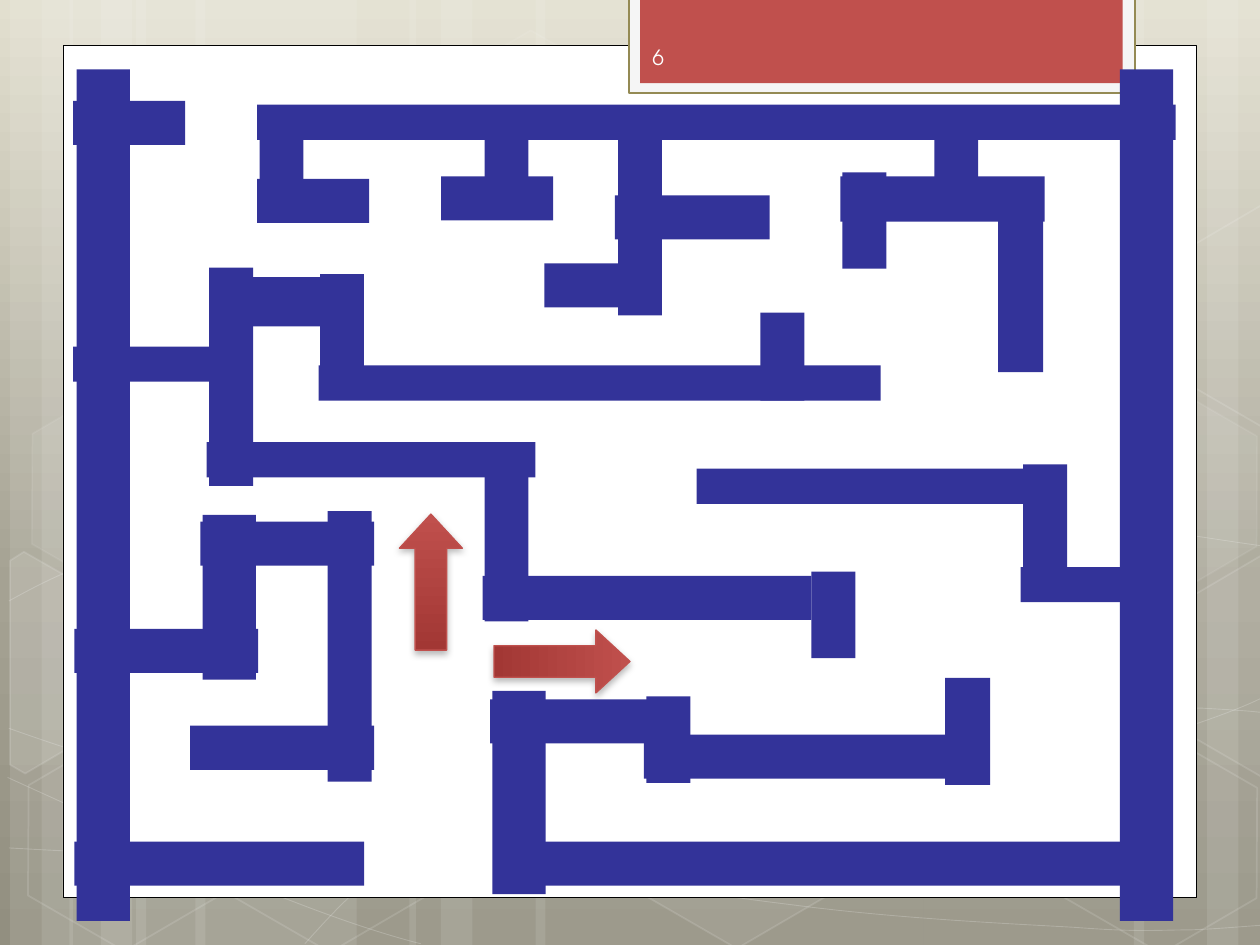
from lxml import etree
from copy import deepcopy
from pptx import Presentation
from pptx.dml.color import RGBColor
from pptx.enum.shapes import MSO_SHAPE
from pptx.enum.text import MSO_ANCHOR
from pptx.oxml.ns import qn
from pptx.util import Inches, Pt

RECTANGLE = MSO_SHAPE.RECTANGLE
HEXAGON = MSO_SHAPE.HEXAGON
UP_ARROW = MSO_SHAPE.UP_ARROW
MIDDLE = MSO_ANCHOR.MIDDLE

COLORS = {
    "white": "FFFFFF", "black": "000000", "wall": "333399", "red": "C0504D",
    "dark_red": "A23734", "tab": "F5F5F5", "tab_line": "948A54", "number": "FEFEFE",
    "sky": "E2DFCF", "middle": "A5A293", "ground": "928F80",
}
BACKGROUND = [(0, "sky"), (0.62, "middle"), (1, "ground")]
ARROW_FILL = [(0, "red"), (1, "dark_red")]

STRIPES = [
    (1.08, 1.75), (0.08, 0.5), (0.33, 0.83), (1.55, 1.75), (0.55, 0.5), (0.8, 0.83),
    (7.33, 1.75), (9.58, 0.5), (9, 0.83), (4.25, 3.08), (3.25, 0.5), (3.5, 0.83),
]
CURVES = [
    [(0.07, 6.73), (0.61, 6.76), (1.15, 6.79), (1.9, 6.78), (2.65, 6.77), (3.58, 6.75),
     (4.58, 6.65), (5.58, 6.55), (7, 6.36), (7.92, 6.17), (8.83, 5.98), (9.77, 5.68),
     (10.07, 5.51)],
    [(0.07, 4.77), (0.36, 4.61), (0.65, 4.46), (1.21, 4.31), (1.78, 4.16), (2.59, 3.94),
     (3.47, 3.87), (4.36, 3.8), (5.44, 3.79), (6.54, 3.87), (7.64, 3.95), (9.47, 4.26),
     (10.07, 4.34)],
    [(0.06, 6.17), (1.27, 6.72), (2.47, 7.27), (3.34, 7.49)],
    [(0.07, 5.78), (0.38, 5.89), (0.7, 6), (1.28, 6.16), (1.86, 6.31), (2.73, 6.56),
     (3.57, 6.73), (4.4, 6.9), (5.45, 7.08), (6.28, 7.18), (7.11, 7.29), (8, 7.33),
     (8.53, 7.36), (9.05, 7.4), (9.19, 7.38), (9.45, 7.38), (9.71, 7.37), (9.89, 7.35),
     (10.07, 7.34)],
    [(2.42, 7.49), (2.6, 7.29), (2.78, 7.09), (3.02, 6.91), (3.26, 6.73), (3.6, 6.53),
     (3.88, 6.39), (4.16, 6.25), (4.33, 6.19), (4.7, 6.09), (5.06, 5.99), (5.73, 5.85),
     (6.08, 5.78), (6.44, 5.71), (6.49, 5.71), (6.8, 5.69), (7.11, 5.66), (7.6, 5.63),
     (7.94, 5.62), (8.29, 5.61), (8.86, 5.62), (8.86, 5.62), (9.08, 5.62), (9.31, 5.62),
     (9.53, 5.62), (9.71, 5.63), (9.88, 5.64), (9.97, 5.65), (10.06, 5.66),
     (10.03, 5.65), (10.06, 5.66)],
]
HEXAGONS = [
    (3.34, 0.36, 4, 8), (4.97, 5.89, 6, 12), (0.11, 5.91, None, 12), (0.14, 3.12, 7, 8),
    (1.74, 5.92, None, 12), (7.53, 4.53, 10, 12), (8.34, 5.93, None, 12), (8.34, 3.14, 7, 8),
]
CUT_HEXAGONS = [
    (10, [(0.08, 4.45), (0.19, 4.38), (0.96, 4.82), (0.95, 5.7), (0.2, 6.14), (0.08, 6.07)]),
    (4, [(9.26, 4.85), (10.01, 4.41), (10.09, 4.46), (10.09, 6.13), (10.02, 6.17), (9.26, 5.73)]),
    (None, [(9.26, 2.07), (10.01, 1.63), (10.1, 1.68), (10.09, 3.35), (10.02, 3.39), (9.26, 2.95)]),
]
PANELS = [
    ((0.5, 0.36, 9, 6.76), {"fill": "white", "line": "black", "width": 0.5}),
    ((4.99, -0.02, 4.02, 0.76), {"fill": "tab", "line": "tab_line", "width": 1.25}),
    ((5.08, -0.02, 3.83, 0.68), {"fill": "red"}),
]
PAGE_NUMBER = "6"
NUMBER_FONT = {"name": "TeX Gyre Adventor", "size": Pt(12)}
ARROWS = [(3.17, 4.08, 0), (4.21, 4.71, 90)]

MAZE_STRETCH = 1.09
HORIZONTAL_WALLS = [
    (0.59, 6.68, 2.3, 0.35), (3.83, 4.57, 2.61, 0.35), (0.59, 4.99, 1.46, 0.35),
    (2.53, 2.9, 4.46, 0.28), (5.53, 3.72, 2.76, 0.28), (2.04, 0.83, 7.29, 0.28),
    (1.59, 4.14, 1.38, 0.35), (1.74, 2.2, 1.12, 0.39), (6.67, 1.4, 1.62, 0.36),
    (0.58, 2.75, 1.38, 0.28), (1.51, 5.76, 1.46, 0.35), (3.89, 5.55, 1.53, 0.35),
    (4.12, 6.68, 5.14, 0.35), (4.32, 2.09, 0.89, 0.35), (1.64, 3.51, 2.61, 0.28),
    (8.1, 4.5, 1.15, 0.28), (5.11, 5.83, 2.61, 0.35), (4.88, 1.55, 1.23, 0.35),
    (3.5, 1.4, 0.89, 0.35), (2.04, 1.42, 0.89, 0.35), (0.58, 0.8, 0.89, 0.35),
]
VERTICAL_WALLS = [
    (6.3, 4.69, 0.63, 0.38), (7.29, 5.61, 0.78, 0.39), (6.51, 1.56, 0.7, 0.38),
    (6, 3.7, 6.2, 0.46), (2.27, 2.47, 0.89, 0.38), (1.04, 2.8, 1.59, 0.38),
    (-2.28, 3.7, 6.2, 0.46), (3.44, 4.11, 1.16, 0.38), (1.79, 4.94, 1.97, 0.38),
    (1.22, 4.51, 1.2, 0.46), (1.92, 1.07, 0.63, 0.38), (3.38, 6.06, 1.48, 0.46),
    (7.29, 1.06, 0.6, 0.38), (7.46, 2.06, 1.28, 0.39), (4.99, 5.68, 0.63, 0.38),
    (7.84, 3.99, 0.91, 0.38), (5.89, 2.64, 0.64, 0.38), (4.37, 1.54, 1.42, 0.38),
    (3.72, 1.2, 0.6, 0.38),
]


def rgb(name):
    return RGBColor.from_string(COLORS[name])


def paint_gradient(fill, element, stops):
    fill.gradient()
    fill.gradient_angle = 270
    stop_list = element.find(".//" + qn("a:gsLst"))
    while len(stop_list) < len(stops):
        stop_list.append(deepcopy(stop_list[0]))
    for stop, (position, name) in zip(fill.gradient_stops, stops):
        stop.position = position
        stop.color.rgb = rgb(name)


def style(shape, fill=None, line=None, width=1, alphas=()):
    shape.shadow.inherit = False
    for paint, name in ((shape.fill, fill), (shape.line.fill, line)):
        if name:
            paint.solid()
            paint.fore_color.rgb = rgb(name)
        else:
            paint.background()
    if line:
        shape.line.width = Pt(width)
    colors = list(shape._element.spPr.iter(qn("a:srgbClr")))
    for color, alpha in zip(colors, alphas):
        etree.SubElement(color, qn("a:alpha"), val=str(alpha * 1000))


def add_preset(parent, kind, place, rotation=0, **look):
    shape = parent.shapes.add_shape(kind, *map(Inches, place))
    shape.rotation = rotation
    style(shape, **look)
    return shape


def add_outline(page, points, closed, **look):
    (left, top), *others = [(x * 100, y * 100) for x, y in points]
    builder = page.shapes.build_freeform(left, top, scale=Inches(0.01))
    builder.add_line_segments(others, close=closed)
    outline = builder.convert_to_shape()
    style(outline, **look)
    return outline


def bend(outline):
    lines = list(outline._element.spPr.iter(qn("a:lnTo")))
    for first in range(0, len(lines), 3):
        curve = etree.Element(qn("a:cubicBezTo"))
        lines[first].addprevious(curve)
        for line in lines[first:first + 3]:
            curve.append(line[0])
            line.getparent().remove(line)


def hexagon_look(fill_alpha, line_alpha):
    if fill_alpha is None:
        return {"line": "white", "alphas": (line_alpha,)}
    return {"fill": "white", "line": "white", "alphas": (fill_alpha, line_alpha)}


def add_backdrop(page):
    paint_gradient(page.background.fill, page._element, BACKGROUND)
    for left, width in STRIPES:
        add_preset(page, RECTANGLE, (left, 0, width, 7.5), fill="white", alphas=(10,))
    for knots in CURVES:
        bend(add_outline(page, knots, False, line="white", width=0.5, alphas=(20,)))
    for left, top, fill_alpha, line_alpha in HEXAGONS:
        hexagon = add_preset(page, HEXAGON, (left, top, 1.75, 1.52), 30,
                             **hexagon_look(fill_alpha, line_alpha))
        hexagon.adjustments[0] = 0.285
    for fill_alpha, points in CUT_HEXAGONS:
        add_outline(page, points, True, **hexagon_look(fill_alpha, 12))
    for place, look in PANELS:
        add_preset(page, RECTANGLE, place, **look)
    for shape in list(page.shapes):
        page.slide_layout.shapes.element.append(shape.element)


def add_page_number(page):
    box = page.shapes.add_textbox(*map(Inches, (5.08, 0.25, 1.46, 0.4)))
    box.text_frame.word_wrap = True
    box.text_frame.vertical_anchor = MIDDLE
    span = box.text_frame.paragraphs[0].add_run()
    span.text = PAGE_NUMBER
    for key, value in NUMBER_FONT.items():
        setattr(span.font, key, value)
    span.font.color.rgb = rgb("number")


def add_arrow(page, left, top, rotation):
    arrow = add_preset(page, UP_ARROW, (left, top, 0.5, 1.08), rotation, line="red", width=0.75)
    arrow.adjustments[1] = 0.542
    properties = arrow._element.spPr
    paint_gradient(arrow.fill, properties, ARROW_FILL)
    shadow = etree.SubElement(properties.find(qn("a:effectLst")), qn("a:outerShdw"),
                              blurRad=str(Pt(4)), dist=str(Pt(2)), dir="5400000", rotWithShape="0")
    color = etree.SubElement(shadow, qn("a:srgbClr"), val=COLORS["black"])
    etree.SubElement(color, qn("a:alpha"), val="28000")


def add_maze(page):
    maze = page.shapes.add_group_shape()
    for walls, rotation in ((HORIZONTAL_WALLS, 0), (VERTICAL_WALLS, 270)):
        for left, top, length, thickness in walls:
            place = (left, top / MAZE_STRETCH, length, thickness / MAZE_STRETCH)
            add_preset(maze, RECTANGLE, place, rotation, fill="wall")
    maze.top = round(maze.top * MAZE_STRETCH)
    maze.height = round(maze.height * MAZE_STRETCH)


def main():
    deck = Presentation()
    deck.slide_width, deck.slide_height = Inches(10), Inches(7.5)
    page = deck.slides.add_slide(deck.slide_layouts[6])
    add_backdrop(page)
    add_page_number(page)
    for arrow in ARROWS:
        add_arrow(page, *arrow)
    add_maze(page)
    deck.save("out.pptx")


if __name__ == "__main__":
    main()
